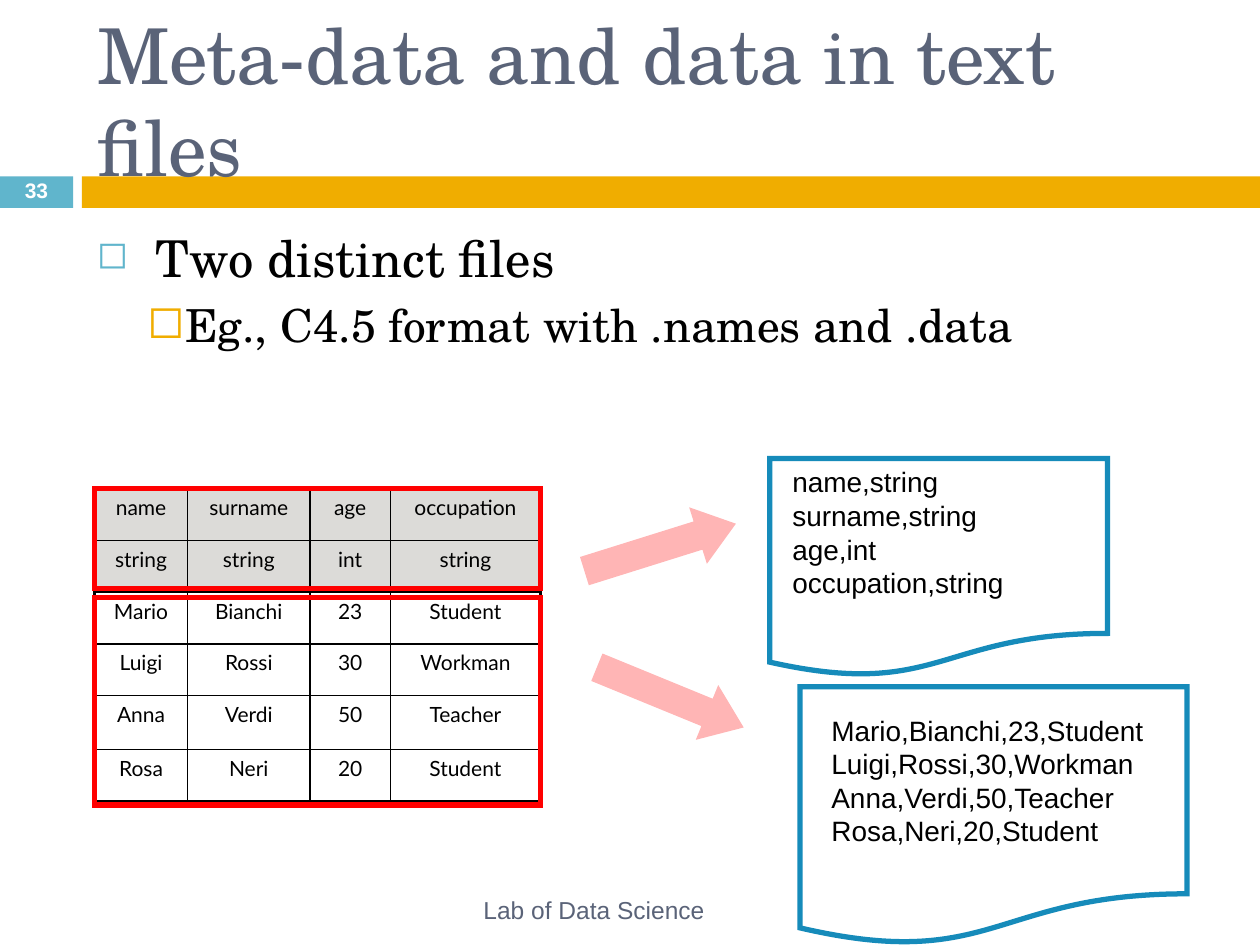
from typing import NamedTuple

from lxml.etree import SubElement
from pptx import Presentation
from pptx.dml.color import RGBColor
from pptx.enum.shapes import MSO_SHAPE
from pptx.enum.text import MSO_ANCHOR, MSO_AUTO_SIZE, PP_ALIGN
from pptx.oxml.ns import qn
from pptx.util import Inches, Pt

COLORS = {
    "slate": "5A6378", "sky": "60B5CC", "gold": "F0AD00", "black": "000000",
    "white": "FFFFFF", "grey": "BBB9B3", "red": "FF0000", "blue": "168BBA",
}
SERIF, SANS, CELL = "TeX Gyre Schola", "Arial", "Lato"


class Box(NamedTuple):
    left: float
    top: float
    width: float
    height: float


class Shape(NamedTuple):
    kind: MSO_SHAPE
    box: Box
    fill: str | None = None
    line: str | None = None
    alpha: int = 100
    rotation: float = 0


class Label(NamedTuple):
    lines: list[str]
    box: Box
    size: float
    color: str = "black"
    bold: bool = False
    centred: bool = False
    spacing: float | None = None


class Bullet(NamedTuple):
    text: str
    size: float
    margin: float
    indent: float
    percent: int
    color: str
    before: float


BARS = [
    Shape(MSO_SHAPE.RECTANGLE, Box(0, 1.4, 0.58, 0.25), fill="sky"),
    Shape(MSO_SHAPE.RECTANGLE, Box(0.65, 1.4, 9.35, 0.25), fill="gold"),
]
FRAMES = [
    Shape(MSO_SHAPE.RECTANGLE, Box(0.75, 3.88, 3.54, 0.79), line="red"),
    Shape(MSO_SHAPE.RECTANGLE, Box(0.75, 4.74, 3.54, 1.65), line="red"),
    Shape(MSO_SHAPE.FLOWCHART_DOCUMENT, Box(6.11, 3.64, 2.68, 1.73), line="blue"),
    Shape(MSO_SHAPE.FLOWCHART_DOCUMENT, Box(6.35, 5.45, 3.07, 2.05), line="blue"),
]
ARROWS = [
    Shape(MSO_SHAPE.RIGHT_ARROW, Box(4.61, 4.11, 1.26, 0.47), "red", alpha=29, rotation=342.6),
    Shape(MSO_SHAPE.RIGHT_ARROW, Box(4.69, 5.3, 1.26, 0.47), "red", alpha=29, rotation=22.3),
]
BULLETS = [
    Bullet(" Two distinct files", 29, 0.35, -0.35, 75, "sky", 0),
    Bullet("Eg., C4.5 format with .names and .data", 26, 0.7, -0.3, 100, "gold", 5.5),
]
NAMES = ["name", "surname", "age", "occupation"]
TYPES = ["string", "string", "int", "string"]
PEOPLE = [
    ["Mario", "Bianchi", "23", "Student"],
    ["Luigi", "Rossi", "30", "Workman"],
    ["Anna", "Verdi", "50", "Teacher"],
    ["Rosa", "Neri", "20", "Student"],
]
COL_WIDTHS = [0.74, 0.97, 0.64, 1.19]
ROW_HEIGHTS = [0.41, 0.41, 0.41, 0.41, 0.43, 0.41]
LABELS = [
    Label([",".join(row) for row in PEOPLE], Box(6.5, 5.61, 2.91, 1.18), 16),
    Label([",".join(pair) for pair in zip(NAMES, TYPES)], Box(6.19, 3.64, 2.05, 1.18), 16),
    Label(["33"], Box(0, 1.39, 0.58, 0.27), 12, "white", True, True, 0.8),
    Label(["Lab of Data Science"], Box(1.75, 7.02, 5.93, 0.4), 14, "slate", centred=True),
]


def rgb(name: str) -> RGBColor:
    return RGBColor.from_string(COLORS[name])


def lengths(box: Box) -> list[Inches]:
    return [Inches(v) for v in box]


def add_run(p, text: str, font: str, size: float, color: str, bold: bool = False) -> None:
    r = p.add_run()
    r.text = text
    r.font.name = font
    r.font.size = Pt(size)
    r.font.bold = bold
    r.font.color.rgb = rgb(color)


def set_fill(fill, color: str, alpha: int) -> None:
    fill.solid()
    fill.fore_color.rgb = rgb(color)
    if alpha < 100:
        for clr in fill._xPr.iter(qn("a:srgbClr")):
            SubElement(clr, qn("a:alpha"), val=str(alpha * 1000))


def add_shape(s, item: Shape) -> None:
    sp = s.shapes.add_shape(item.kind, *lengths(item.box))
    sp.shadow.inherit = False
    sp.rotation = item.rotation
    if item.kind == MSO_SHAPE.RIGHT_ARROW:
        sp.adjustments[0], sp.adjustments[1] = 0.5, 0.67
    if item.fill:
        set_fill(sp.fill, item.fill, item.alpha)
    else:
        sp.fill.background()
    if item.line:
        sp.line.color.rgb = rgb(item.line)
        sp.line.width = Pt(3)
        SubElement(sp.line._get_or_add_ln(), qn("a:miter"), lim="800000")
    else:
        sp.line.fill.background()


def add_label(s, item: Label) -> None:
    tf = s.shapes.add_textbox(*lengths(item.box)).text_frame
    tf.word_wrap = True
    tf.vertical_anchor = MSO_ANCHOR.MIDDLE if item.centred else MSO_ANCHOR.TOP
    for i, line in enumerate(item.lines):
        p = tf.add_paragraph() if i else tf.paragraphs[0]
        p.alignment = PP_ALIGN.CENTER if item.centred else PP_ALIGN.LEFT
        p.line_spacing = item.spacing
        add_run(p, line, SANS, item.size, item.color, item.bold)


def add_bullets(s, box: Box, bullets: list[Bullet]) -> None:
    tf = s.shapes.add_textbox(*lengths(box)).text_frame
    tf.word_wrap = True
    for i, item in enumerate(bullets):
        p = tf.add_paragraph() if i else tf.paragraphs[0]
        p.level = i
        p.space_before = Pt(item.before)
        pPr = p._p.get_or_add_pPr()
        pPr.set("marL", str(Inches(item.margin)))
        pPr.set("indent", str(Inches(item.indent)))
        clr = SubElement(pPr, qn("a:buClr"))
        SubElement(clr, qn("a:srgbClr"), val=COLORS[item.color])
        SubElement(pPr, qn("a:buSzPct"), val=str(item.percent * 1000))
        SubElement(pPr, qn("a:buChar"), char="◻")
        add_run(p, item.text, SERIF, item.size, "black")


def set_borders(cell, widths: dict[str, float]) -> None:
    tcPr = cell._tc.get_or_add_tcPr()
    for i, (side, width) in enumerate(widths.items()):
        ln = SubElement(tcPr, qn(f"a:ln{side}"), w=str(Pt(width)))
        fill = SubElement(ln, qn("a:solidFill"))
        SubElement(fill, qn("a:srgbClr"), val=COLORS["black"])
        tcPr.insert(i, ln)


def add_people_table(s, left: float, top: float) -> None:
    rows = [NAMES, TYPES, *PEOPLE]
    box = Box(left, top, sum(COL_WIDTHS), sum(ROW_HEIGHTS))
    table = s.shapes.add_table(len(rows), len(NAMES), *lengths(box)).table
    table.first_row = table.horz_banding = False
    for col, width in zip(table.columns, COL_WIDTHS):
        col.width = Inches(width)
    for row, height in zip(table.rows, ROW_HEIGHTS):
        row.height = Inches(height)
    last_row, last_col = len(rows) - 1, len(NAMES) - 1
    for i, values in enumerate(rows):
        for j, value in enumerate(values):
            cell = table.cell(i, j)
            if i < 2:
                set_fill(cell.fill, "grey", 50)
            else:
                cell.fill.background()
            outer = {"L": j == 0, "R": j == last_col, "T": i == 0, "B": i == last_row}
            set_borders(cell, {side: 2.25 if edge else 1 for side, edge in outer.items()})
            p = cell.text_frame.paragraphs[0]
            p.alignment = PP_ALIGN.CENTER
            add_run(p, value, CELL, 12, "black")


def add_title(s, text: str, box: Box) -> None:
    title = s.shapes.title
    title.left, title.top, title.width, title.height = lengths(box)
    tf = title.text_frame
    tf.word_wrap = True
    tf.auto_size = MSO_AUTO_SIZE.NONE
    tf.vertical_anchor = MSO_ANCHOR.MIDDLE
    p = tf.paragraphs[0]
    p.alignment = PP_ALIGN.LEFT
    add_run(p, text, SERIF, 44, "slate")
    s.shapes.element.append(title.element)


def main() -> None:
    prs = Presentation()
    prs.slide_width, prs.slide_height = Inches(10), Inches(7.5)
    s = prs.slides.add_slide(prs.slide_layouts[5])
    for bar in BARS:
        add_shape(s, bar)
    add_title(s, "Meta-data and data in text files", Box(0.67, 0.25, 8.92, 1.08))
    add_bullets(s, Box(0.67, 1.75, 8.92, 4.92), BULLETS)
    add_people_table(s, 0.75, 3.88)
    for item in FRAMES + ARROWS:
        add_shape(s, item)
    for label in LABELS:
        add_label(s, label)
    prs.save("out.pptx")


if __name__ == "__main__":
    main()
